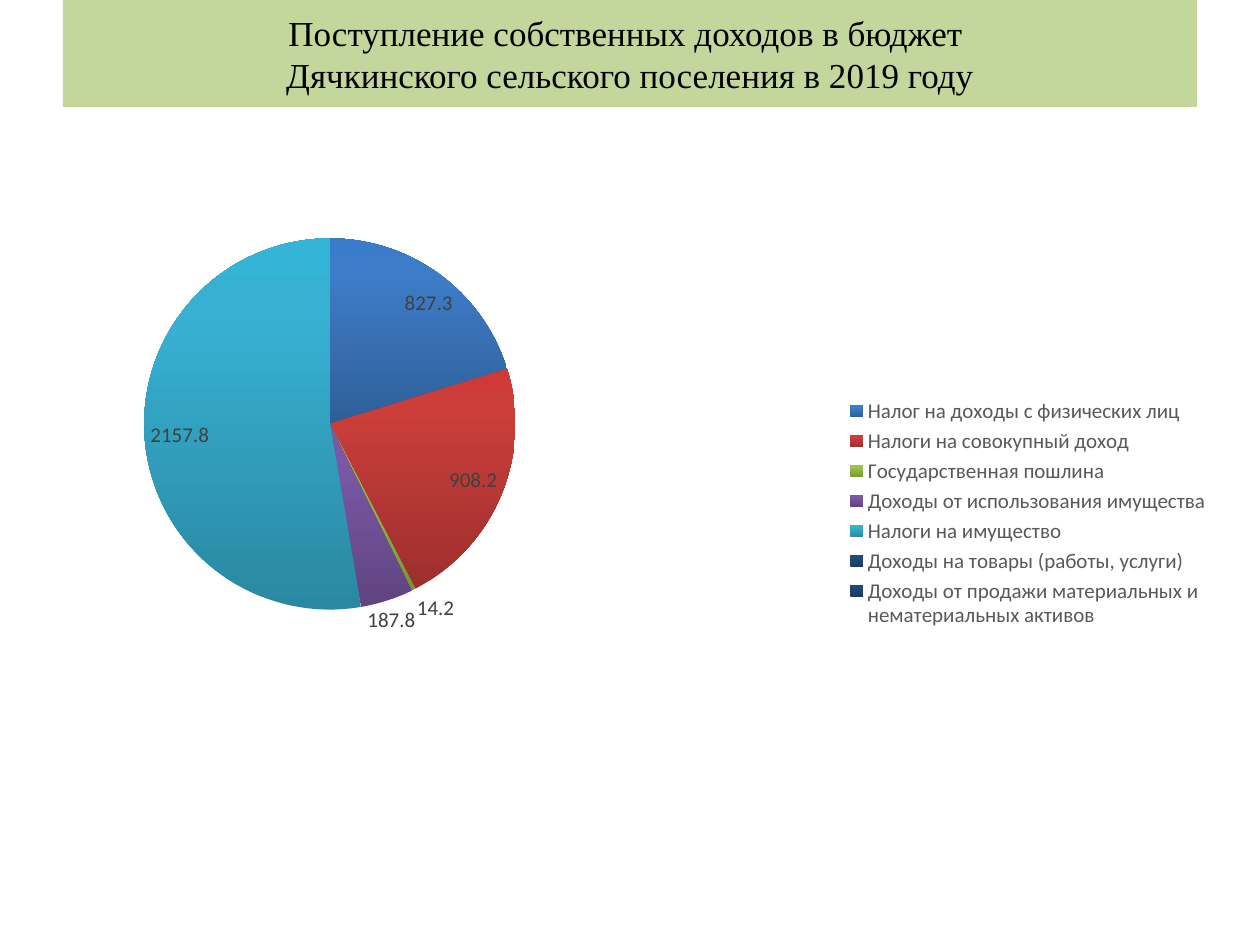
from copy import deepcopy

from pptx import Presentation
from pptx import oxml
from pptx import util as u
from pptx.chart import data
from pptx.dml import color
from pptx.enum import chart as ch, shapes, text
from pptx.oxml import ns

SCALE = 914400 / 126

COLORS = {
    "banner": "C3D69B",
    "title": "000000",
    "legend": "595959",
    "label": "404040",
}

INCOME = [
    ("Налог на доходы с физических лиц", 827.3, "blue"),
    ("Налоги на совокупный доход", 908.2, "red"),
    ("Государственная пошлина ", 14.2, "green"),
    ("Доходы от использования имущества", 187.8, "purple"),
    ("Налоги на имущество", 2157.8, "teal"),
    ("Доходы на товары (работы, услуги)", None, "navy"),
    ("Доходы от продажи материальных и \nнематериальных активов", None, "navy"),
]

GRADIENTS = {
    "blue": ("2F5F99", "3D7CC7", "3A7CCB"),
    "red": ("9C2F2D", "CB3E3A", "CE3B37"),
    "green": ("779737", "9BC348", "9DC746"),
    "purple": ("5F4480", "7B58A6", "7C57A8"),
    "teal": ("2A88A2", "37B1D2", "34B4D6"),
    "navy": ("19395F", "204A7C", "1E4A7E"),
}
STOPS = (0, 0.8, 1)

PLOT_AREA = {"x": 0.07, "y": 0.12, "w": 0.32, "h": 0.54}


def px(*lengths):
    return [u.Emu(round(length * SCALE)) for length in lengths]


def rgb(value):
    return color.RGBColor.from_string(value)


def style_font(font, name, size, value):
    font.name = name
    font.size = u.Pt(size)
    font.color.rgb = rgb(value)


def add_banner(page, words, *bounds):
    box = page.shapes.add_shape(shapes.MSO_SHAPE.RECTANGLE, *px(*bounds))
    box.shadow.inherit = False
    box.fill.solid()
    box.fill.fore_color.rgb = rgb(COLORS["banner"])
    box.line.fill.background()
    frame = box.text_frame
    frame.word_wrap = True
    frame.vertical_anchor = text.MSO_ANCHOR.MIDDLE
    para = frame.paragraphs[0]
    para.text = words
    para.alignment = text.PP_ALIGN.CENTER
    for span in para.runs:
        style_font(span.font, "Times New Roman", 20, COLORS["title"])


def place_plot(chart):
    area = chart._chartSpace.chart.plotArea
    for old in area.findall(ns.qn("c:layout")):
        area.remove(old)
    sizes = "".join(f'<c:{key} val="{value}"/>' for key, value in PLOT_AREA.items())
    area.insert(0, oxml.parse_xml(
        f'<c:layout {ns.nsdecls("c")}><c:manualLayout><c:layoutTarget val="inner"/>'
        '<c:xMode val="edge"/><c:yMode val="edge"/>'
        f'{sizes}</c:manualLayout></c:layout>'
    ))


def shade_slices(chart, series):
    slices = [series.points[index].format for index in range(len(INCOME))]
    for piece in slices:
        piece.fill.gradient()
        piece.fill.gradient_angle = 90
        piece.line.fill.background()
    for stop_list in chart._chartSpace.xpath(".//a:gsLst"):
        stop_list.append(deepcopy(stop_list[-1]))
    for piece, (_, _, shade) in zip(slices, INCOME):
        for stop, position, value in zip(piece.fill.gradient_stops, STOPS, GRADIENTS[shade]):
            stop.position = position
            stop.color.rgb = rgb(value)


def add_income_pie(page, *bounds):
    income = data.CategoryChartData()
    income.categories = [name for name, _, _ in INCOME]
    income.add_series("Series 1", [amount for _, amount, _ in INCOME])
    chart = page.shapes.add_chart(ch.XL_CHART_TYPE.PIE, *px(*bounds), income).chart
    chart.has_title = False
    style_font(chart.font, "Calibri", 10, COLORS["title"])

    chart.has_legend = True
    chart.legend.position = ch.XL_LEGEND_POSITION.RIGHT
    chart.legend.include_in_layout = False
    style_font(chart.legend.font, "Calibri", 12, COLORS["legend"])

    plot = chart.plots[0]
    plot.vary_by_categories = True
    series = plot.series[0]
    shade_slices(chart, series)
    labels = series.data_labels
    labels.show_value = True
    labels.position = ch.XL_LABEL_POSITION.BEST_FIT
    style_font(labels.font, "Calibri", 12, COLORS["label"])
    place_plot(chart)


def main():
    deck = Presentation()
    deck.slide_width, deck.slide_height = px(1260, 945)
    page = deck.slides.add_slide(deck.slide_layouts[6])
    add_banner(
        page,
        "Поступление собственных доходов в бюджет \vДячкинского сельского поселения в 2019 году",
        63, 0, 1134, 107,
    )
    add_income_pie(page, 63, 107, 1160, 813)
    deck.save("out.pptx")


if __name__ == "__main__":
    main()
